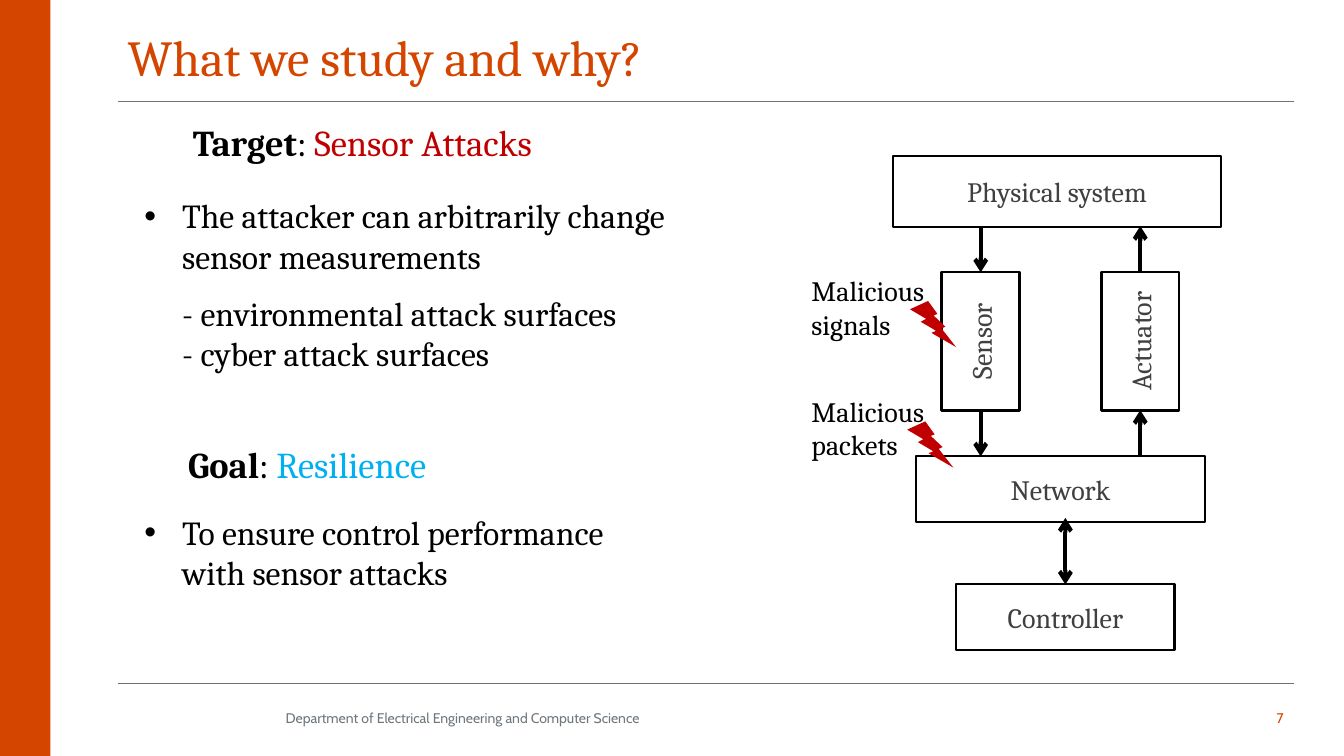
from lxml import etree
from pptx import Presentation
from pptx.dml.color import RGBColor
from pptx.enum.shapes import MSO_CONNECTOR, MSO_SHAPE
from pptx.enum.text import MSO_ANCHOR, MSO_AUTO_SIZE, PP_ALIGN
from pptx.oxml.ns import qn
from pptx.util import Pt

RECT, BOLT = MSO_SHAPE.RECTANGLE, MSO_SHAPE.LIGHTNING_BOLT
STRAIGHT = MSO_CONNECTOR.STRAIGHT
TOP, MIDDLE = MSO_ANCHOR.TOP, MSO_ANCHOR.MIDDLE
LEFT, CENTER, RIGHT = PP_ALIGN.LEFT, PP_ALIGN.CENTER, PP_ALIGN.RIGHT
FIXED = MSO_AUTO_SIZE.NONE

ORANGE = RGBColor(0xD4, 0x45, 0x00)
RULE = RGBColor(0x70, 0x70, 0x70)
GRAY = RGBColor(0x6F, 0x77, 0x7D)
DARK = RGBColor(0x40, 0x40, 0x40)
BLACK = RGBColor(0, 0, 0)
RED = RGBColor(0xC0, 0, 0)
BLUE = RGBColor(0, 0xB0, 0xF0)

SERIF, SANS = "Cambria", "Cabin"
INDENT = Pt(27)


def write(para, text, size=24, color=BLACK, font=SERIF, bold=False, align=LEFT):
    para.alignment = align
    run = para.add_run()
    run.text = text
    run.font.name = font
    run.font.size = Pt(size)
    run.font.bold = bold
    run.font.color.rgb = color


def indent(para, mark=None):
    props = para._p.get_or_add_pPr()
    props.set("marL", str(INDENT))
    props.set("indent", str(-INDENT if mark else 0))
    if mark:
        etree.SubElement(props, qn("a:buFont")).set("typeface", "Arial")
        etree.SubElement(props, qn("a:buChar")).set("char", mark)


def add_box(slide, x, y, w, h, anchor=TOP):
    box = slide.shapes.add_textbox(Pt(x), Pt(y), Pt(w), Pt(h))
    frame = box.text_frame
    frame.word_wrap = True
    frame.vertical_anchor = anchor
    return frame


def add_label(slide, x, y, w, h, text, **style):
    frame = add_box(slide, x, y, w, h, MIDDLE)
    write(frame.paragraphs[0], text, size=10, font=SANS, **style)


def add_head(slide, y, w, name, text, color):
    para = add_box(slide, 114.5, y, w, 39).paragraphs[0]
    write(para, name, size=26, bold=True, align=CENTER)
    write(para, ": ", size=26, align=CENTER)
    write(para, text, size=26, color=color, align=CENTER)


def add_list(slide, y, w, h, point, subs=()):
    frame = add_box(slide, 96, y, w, h)
    para = frame.paragraphs[0]
    indent(para, "•")
    write(para, point)
    for i, sub in enumerate(subs):
        para = frame.add_paragraph()
        indent(para)
        if i == 0:
            para.space_before = Pt(12)
        write(para, "- " + sub)


def add_solid(slide, kind, x, y, w, h, color):
    shape = slide.shapes.add_shape(kind, Pt(x), Pt(y), Pt(w), Pt(h))
    shape.shadow.inherit = False
    shape.fill.solid()
    shape.fill.fore_color.rgb = color
    shape.line.fill.background()


def add_block(slide, x, y, w, h, text, width=1.5, turn=0):
    shape = slide.shapes.add_shape(RECT, Pt(x), Pt(y), Pt(w), Pt(h))
    shape.shadow.inherit = False
    shape.fill.background()
    shape.line.color.rgb = BLACK
    shape.line.width = Pt(width)
    shape.rotation = turn
    frame = shape.text_frame
    frame.vertical_anchor = MIDDLE
    write(frame.paragraphs[0], text, size=20, color=DARK, align=CENTER)


def add_line(slide, x1, y1, x2, y2, color=BLACK, width=3, ends=()):
    line = slide.shapes.add_connector(STRAIGHT, Pt(x1), Pt(y1), Pt(x2), Pt(y2))
    line.line.color.rgb = color
    line.line.width = Pt(width)
    stroke = line.line._get_or_add_ln()
    for end in ends:
        etree.SubElement(stroke, qn("a:" + end)).set("type", "arrow")
    etree.SubElement(line._element.spPr, qn("a:effectLst"))


def add_threat(slide, y, word, x):
    frame = add_box(slide, 572.5, y, 101.5, 55.5)
    write(frame.paragraphs[0], "Malicious", size=20)
    write(frame.add_paragraph(), word, size=20)
    add_solid(slide, BOLT, x, y + 23, 33, 33, RED)


def add_title(slide, text):
    title = slide.shapes.title
    title.left, title.top, title.width, title.height = Pt(84), Pt(20), Pt(840), Pt(50)
    frame = title.text_frame
    frame.auto_size = FIXED
    frame.vertical_anchor = TOP
    para = frame.paragraphs[0]
    para.line_spacing = 0.9
    write(para, text, size=36, color=ORANGE)


def add_loop(slide):
    add_block(slide, 638, 111.5, 234, 50.5, "Physical system")
    add_block(slide, 654.5, 326, 206, 47, "Network")
    add_block(slide, 683, 417.5, 156, 47, "Controller")
    for x, name, down in ((700.5, "Sensor", True), (814.5, "Actuator", False)):
        add_block(slide, x - 49.5, 216, 99, 55.5, name, width=2, turn=270)
        for span in ((161.5, 194.5), (293, 326)):
            start, end = span if down else span[::-1]
            add_line(slide, x, start, x, end, ends=["tailEnd"])
    add_line(slide, 761, 417.5, 761, 370, ends=["headEnd", "tailEnd"])


def main():
    deck = Presentation()
    deck.slide_width, deck.slide_height = Pt(960), Pt(540)
    slide = deck.slides.add_slide(deck.slide_layouts[5])

    add_solid(slide, RECT, 0, 0, 36, 540, ORANGE)
    for y in (72.5, 488):
        add_line(slide, 84, y, 924, y, color=RULE, width=0.75)
    add_title(slide, "What we study and why?")
    add_label(slide, 197, 499, 679, 28,
              "Department of Electrical Engineering and Computer Science", color=GRAY)
    add_label(slide, 876, 498, 48, 29, "7", color=ORANGE, align=RIGHT)

    add_head(slide, 82, 289, "Target", "Sensor Attacks", RED)
    add_list(slide, 136, 399, 135,
             "The attacker can arbitrarily change sensor measurements",
             ["environmental attack surfaces", "cyber attack surfaces"])
    add_head(slide, 312.5, 210, "Goal", "Resilience", BLUE)
    add_list(slide, 362, 383, 78,
             "To ensure control performance with sensor attacks")

    add_loop(slide)
    add_threat(slide, 192, "signals", 650)
    add_threat(slide, 278, "packets", 648)
    deck.save("out.pptx")


if __name__ == "__main__":
    main()
